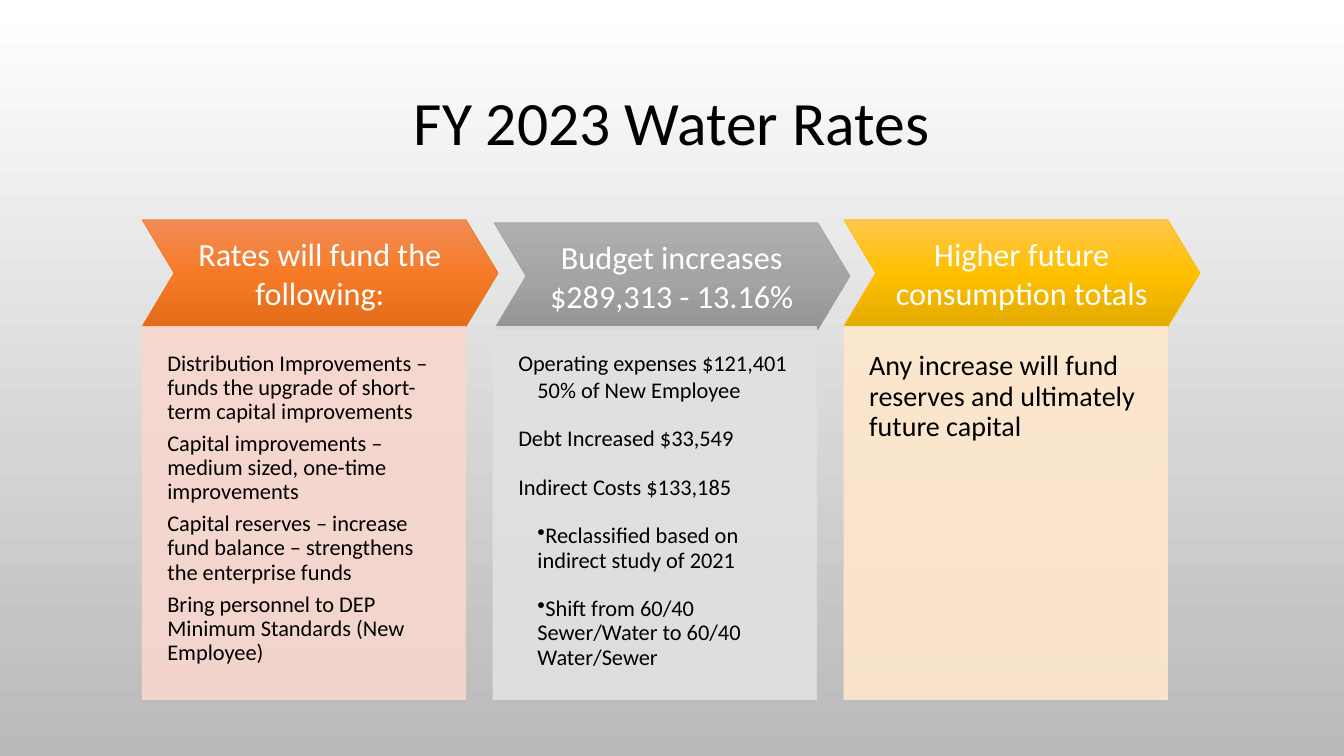
from lxml.etree import SubElement
from pptx import Presentation
from pptx.dml.color import RGBColor
from pptx.enum.shapes import MSO_SHAPE
from pptx.enum.text import MSO_ANCHOR, PP_ALIGN
from pptx.oxml.ns import qn
from pptx.util import Pt

PX = 9144  # EMU per px, 100 px to the inch
COLORS = {
    "text": "000000",
    "heading": "FFFFFF",
    "background": ["FFFFFF", "B9B9B9"],
    "orange": ["F18C57", "F67B28", "E56C19"],
    "orange line": "ED7D31",
    "orange panel": "F8D7CE",
    "gray": ["AFAFAF", "A5A5A5", "939393"],
    "gray line": "A5A5A5",
    "gray panel": "E1E1E1",
    "gold": ["FFC64B", "FFC000", "E3AB00"],
    "gold line": "FFC000",
    "gold panel": "FFE8CC",
}
BLANK_LINE = 17.5  # points


class SlideBuilder:
    font_name = "Calibri"

    def __init__(self, presentation):
        self.slide = presentation.slides.add_slide(presentation.slide_layouts[5])

    def gradient(self, fill, element, colors):
        fill.gradient()
        fill.gradient_angle = 270
        stops = element.find(".//" + qn("a:gsLst"))
        for stop in list(stops):
            stops.remove(stop)
        for index, color in enumerate(colors):
            position = 100000 * index // (len(colors) - 1)
            stop = SubElement(stops, qn("a:gs"), pos=str(position))
            SubElement(stop, qn("a:srgbClr"), val=color)

    def background(self):
        self.gradient(self.slide.background.fill, self.slide._element, COLORS["background"])

    def style_font(self, paragraph, size, color):
        paragraph.font.name = self.font_name
        paragraph.font.size = Pt(size)
        paragraph.font.color.rgb = RGBColor.from_string(COLORS[color])

    def title(self, text, left, top, width, height):
        title = self.slide.shapes.title
        title.left, title.top = left * PX, top * PX
        title.width, title.height = width * PX, height * PX
        title.text_frame.text = text
        title.text_frame.vertical_anchor = MSO_ANCHOR.MIDDLE
        paragraph = title.text_frame.paragraphs[0]
        paragraph.alignment = PP_ALIGN.CENTER
        paragraph.line_spacing = 0.9
        self.style_font(paragraph, 44, "text")

    def shape(self, kind, left, top, width, height, line_color, inset, bottom_inset):
        shape = self.slide.shapes.add_shape(kind, left * PX, top * PX, width * PX, height * PX)
        shape.shadow.inherit = False
        shape.line.color.rgb = RGBColor.from_string(COLORS[line_color])
        shape.line.width = Pt(0.5)
        frame = shape.text_frame
        frame.word_wrap = True
        frame.margin_left = frame.margin_right = frame.margin_top = inset * PX
        frame.margin_bottom = bottom_inset * PX
        return shape

    def paragraphs(self, frame, count):
        for _ in range(count - 1):
            frame.add_paragraph()
        return frame.paragraphs

    def heading(self, lines, left, top, color):
        shape = self.shape(MSO_SHAPE.CHEVRON, left, top, 353, 106, color + " line", 13, 13)
        shape.adjustments[0] = 0.3
        self.gradient(shape.fill, shape._element, COLORS[color])
        frame = shape.text_frame
        frame.vertical_anchor = MSO_ANCHOR.MIDDLE
        for paragraph, line in zip(self.paragraphs(frame, len(lines)), lines):
            paragraph.text = line
            paragraph.alignment = PP_ALIGN.CENTER
            self.style_font(paragraph, 23, "heading")

    def panel(self, items, left, color, size, space_after):
        color_name = color + " panel"
        shape = self.shape(MSO_SHAPE.RECTANGLE, left, 324, 321, 370, color_name, 25, 51)
        shape.fill.solid()
        shape.fill.fore_color.rgb = RGBColor.from_string(COLORS[color_name])
        for color_element in shape._element.spPr.iter(qn("a:srgbClr")):
            SubElement(color_element, qn("a:alpha"), val="90000")
        frame = shape.text_frame
        frame.vertical_anchor = MSO_ANCHOR.TOP
        for paragraph, item in zip(self.paragraphs(frame, len(items)), items):
            text, style, space_before = item
            paragraph.text = text
            paragraph.alignment = PP_ALIGN.LEFT
            paragraph.line_spacing = 1.0 if style == "indent" else 0.9
            paragraph.space_before = Pt(space_before)
            paragraph.space_after = Pt(space_after)
            if style != "plain":
                paragraph.level = 1
                properties = paragraph._p.get_or_add_pPr()
                properties.set("marL", str(19 * PX))
                properties.set("indent", "0")
                if style == "bullet":
                    SubElement(properties, qn("a:buChar"), char="•")
            self.style_font(paragraph, size, "text")


def main():
    presentation = Presentation()
    presentation.slide_width, presentation.slide_height = 1333 * PX, 750 * PX
    builder = SlideBuilder(presentation)
    builder.background()
    builder.title("FY 2023 Water Rates", 100, 55, 1133, 139)

    # What the rates fund
    funded = [
        "Distribution Improvements – funds the upgrade of short- term capital improvements",
        "Capital improvements – medium sized, one-time improvements",
        "Capital reserves – increase fund balance – strengthens the enterprise funds",
        "Bring personnel to DEP Minimum Standards (New Employee)",
    ]
    # Budget increases: text, style, space before
    budget = [
        ("Operating expenses $121,401", "plain", 0),
        ("50% of New Employee", "indent", 0),
        ("Debt Increased $33,549", "plain", BLANK_LINE),
        ("Indirect Costs $133,185", "plain", BLANK_LINE),
        ("Reclassified based on indirect study of 2021", "bullet", BLANK_LINE),
        ("Shift from 60/40 Sewer/Water to 60/40 Water/Sewer", "bullet", BLANK_LINE),
    ]
    # Future consumption
    future = [("Any increase will fund reserves and ultimately future capital", "plain", 0)]

    # Columns: color, heading lines, heading left and top, items, size, space after
    columns = [
        ("orange", ["Rates will fund the following:"], 141, 218,
         [(text, "plain", 0) for text in funded], 16, 5.6),
        ("gray", ["Budget increases", "$289,313 - 13.16%"], 490, 221, budget, 16, 0),
        ("gold", ["Higher future consumption totals"], 837, 218, future, 20, 7),
    ]
    for index, (color, lines, left, top, items, size, space_after) in enumerate(columns):
        builder.heading(lines, left, top, color)
        builder.panel(items, 141 + 348 * index, color, size, space_after)

    presentation.save("out.pptx")


if __name__ == "__main__":
    main()
